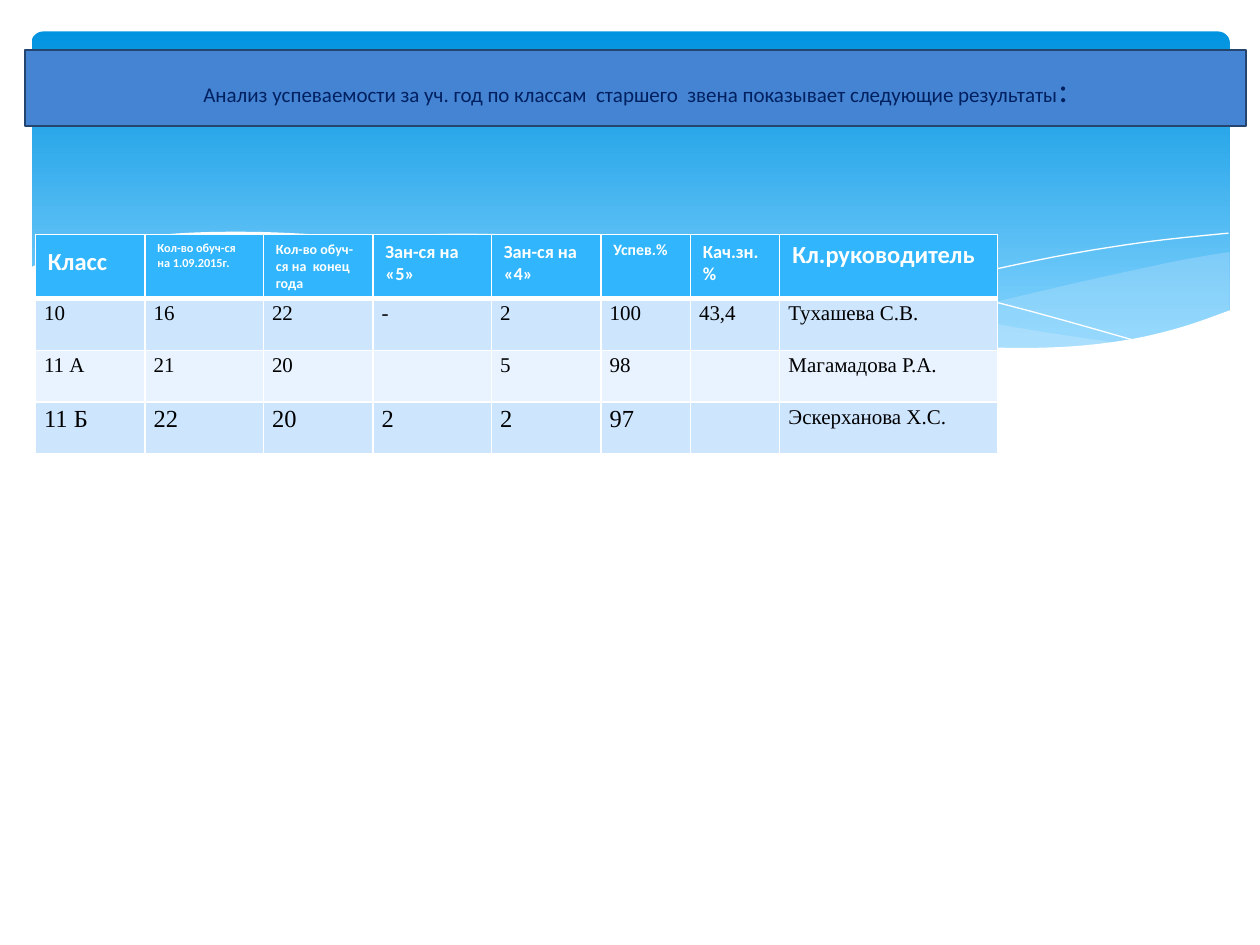
from lxml import etree
from pptx import Presentation
from pptx import util as u
from pptx.dml.color import RGBColor
from pptx.enum import shapes, text
from pptx.oxml.ns import qn

COLORS = {
    "sky_top": "0293E0", "sky_bottom": "83D3FE", "wave": "C6E7FC",
    "white": "FFFFFF", "black": "000000", "header": "31B6FD",
    "band_dark": "CEE5FE", "band_light": "E8F3FF",
    "title_fill": "4584D3", "title_line": "24456E", "title_text": "002060",
}

# Each outline is a list of smooth curves, joined by straight lines
RIGHT_WAVE = [
    [(9.76, 2), (9.35, 2.07), (8.61, 2.23), (7.79, 2.42), (7.06, 2.57), (6.61, 2.65)],
    [(6.61, 2.65), (7.19, 2.72), (7.69, 2.77), (8.14, 2.78), (8.72, 2.74),
     (9.21, 2.65), (9.49, 2.57), (9.76, 2.47)],
]
MIDDLE_WAVE = [
    [(8.93, 2.73), (8.07, 2.6), (7.06, 2.4), (6.29, 2.22), (5.55, 2.05), (4.89, 1.94),
     (4.2, 1.87), (3.61, 1.85), (3.13, 1.88), (2.86, 1.91)],
    [(2.86, 1.91), (3.42, 1.99), (4.04, 2.11), (4.91, 2.32), (5.66, 2.48), (6.34, 2.61),
     (6.95, 2.7), (7.48, 2.76), (7.96, 2.78), (8.48, 2.77), (8.93, 2.73)],
]
LONG_LINE = [[(3.09, 1.95), (3.44, 1.9), (4.01, 1.87), (4.69, 1.89), (5.33, 1.94),
              (6.08, 2.04), (6.95, 2.19), (7.95, 2.41), (9.07, 2.72)]]
RIGHT_LINE = [[(6.13, 2.57), (6.72, 2.41), (7.48, 2.23), (8.36, 2.04), (9.1, 1.92),
               (9.75, 1.85)]]
WHITE_WAVE = [
    [(9.77, 2.46), (9.4, 2.59), (8.99, 2.69), (8.5, 2.75), (7.93, 2.76), (7.26, 2.72),
     (6.48, 2.62), (5.55, 2.45), (4.47, 2.2), (3.65, 2.02), (2.92, 1.9), (2.3, 1.85),
     (1.77, 1.84), (1.32, 1.86), (0.95, 1.91), (0.59, 1.99), (0.36, 2.07), (0.23, 2.13)],
    [(0.23, 3.29), (9.77, 3.29)],
]

# Text and size of each header cell
HEADER = [("Класс", 14), ("Кол-во обуч-ся на 1.09.2015г.", 7),
          ("Кол-во обуч-ся на  конец года", 8), ("Зан-ся на «5»", 10.5),
          ("Зан-ся на «4»", 10.5), ("Успев.%", 9), ("Кач.зн. %", 10.5),
          ("Кл.руководитель", 14)]
ROWS = [
    ["10", "16", "22", "-", "2", "100", "43,4", "Тухашева С.В."],
    ["11 А", "21", "20", "", "5", "98", "", "Магамадова Р.А."],
    ["11 Б", "22", "20", "2", "2", "97", "", "Эскерханова Х.С."],
]
COL_WIDTHS = [0.87, 0.94, 0.87, 0.94, 0.87, 0.71, 0.71, 1.73]
ROW_HEIGHTS = [0.5, 0.41, 0.41, 0.41]


def inch(value):
    return u.Cm(value * 2.54)


def color(name):
    return RGBColor.from_string(COLORS[name])


def style_run(r, size, name, font="Calibri", bold=False):
    r.font.size, r.font.name, r.font.bold = u.Pt(size), font, bold
    r.font.color.rgb = color(name)


def smooth(points, steps=5):
    """Catmull-Rom curve through the points."""
    padded = [points[0], *points, points[-1]]
    curve = [points[0]]
    for a, b, c, d in zip(padded, padded[1:], padded[2:], padded[3:]):
        for t in (i / steps for i in range(1, steps + 1)):
            curve.append(tuple(
                0.5 * (2 * q + (s - p) * t + (2 * p - 5 * q + 4 * s - v) * t ** 2
                       + (3 * q - p - 3 * s + v) * t ** 3)
                for p, q, s, v in zip(a, b, c, d)))
    return curve


def add_outline(slide, x, y, curves, closed):
    points = [(inch(x + px), inch(y + py)) for c in curves for px, py in smooth(c)]
    builder = slide.shapes.build_freeform(*points[0])
    builder.add_line_segments(points[1:], close=closed)
    sp = builder.convert_to_shape()
    sp.shadow.inherit = False
    return sp


def add_wave(slide, x, y, curves, name, opacity=100):
    sp = add_outline(slide, x, y, curves, True)
    sp.fill.solid()
    sp.fill.fore_color.rgb = color(name)
    sp.line.fill.background()
    if opacity < 100:
        clr = sp.fill._xPr.find(qn("a:solidFill"))[0]
        etree.SubElement(clr, qn("a:alpha"), val=str(opacity * 1000))


def add_hairline(slide, x, y, curves):
    sp = add_outline(slide, x, y, curves, False)
    sp.fill.background()
    sp.line.color.rgb = color("white")
    sp.line.width = u.Pt(0)


def add_backdrop(slide, x, y):
    # Gradient panel
    sp = slide.shapes.add_shape(shapes.MSO_SHAPE.ROUNDED_RECTANGLE,
                                inch(x + 0.25), inch(y + 0.25), inch(9.51), inch(2.7))
    sp.adjustments[0] = 0.034
    sp.shadow.inherit = False
    sp.line.fill.background()
    sp.fill.gradient()
    sp.fill.gradient_angle = 270
    stops = zip(sp.fill.gradient_stops, ((0, "sky_top"), (0.9, "sky_bottom")))
    for stop, (position, name) in stops:
        stop.position = position
        stop.color.rgb = color(name)
    # Waves
    add_wave(slide, x, y, RIGHT_WAVE, "wave", 29)
    add_wave(slide, x, y, MIDDLE_WAVE, "wave", 40)
    add_hairline(slide, x, y, LONG_LINE)
    add_hairline(slide, x, y, RIGHT_LINE)
    add_wave(slide, x, y, WHITE_WAVE, "white")


def style_cell(cell, fill, bottom=1):
    tcPr = cell._tc.get_or_add_tcPr()
    for tag, width in (("lnL", 1), ("lnR", 1), ("lnT", 1), ("lnB", bottom)):
        ln = etree.SubElement(tcPr, qn("a:" + tag), w=str(u.Pt(width)))
        solid = etree.SubElement(ln, qn("a:solidFill"))
        etree.SubElement(solid, qn("a:srgbClr"), val=COLORS["white"])
    cell.fill.solid()
    cell.fill.fore_color.rgb = color(fill)


def add_results_table(slide, x, y, w, h):
    table = slide.shapes.add_table(len(ROWS) + 1, len(HEADER), inch(x), inch(y),
                                   inch(w), inch(h)).table
    for col, width in zip(table.columns, COL_WIDTHS):
        col.width = inch(width)
    for row, height in zip(table.rows, ROW_HEIGHTS):
        row.height = inch(height)
    # Header row
    for j, (label, size) in enumerate(HEADER):
        cell = table.cell(0, j)
        style_cell(cell, "header", 3)
        p = cell.text_frame.paragraphs[0]
        p.text = label
        style_run(p.runs[0], size, "white", bold=True)
    r = table.cell(0, 0).text_frame.paragraphs[0].add_run()
    r.text = " "
    style_run(r, 18, "white", bold=True)
    # Class rows: the last one is larger, except for the teacher
    for i, values in enumerate(ROWS, 1):
        for j, value in enumerate(values):
            cell = table.cell(i, j)
            style_cell(cell, "band_dark" if i % 2 else "band_light")
            cell.margin_left = cell.margin_right = inch(0.07)
            cell.margin_top = cell.margin_bottom = 0
            if value:
                p = cell.text_frame.paragraphs[0]
                p.text = value
                p.line_spacing = 1.15
                large = i == len(ROWS) and j < len(HEADER) - 1
                style_run(p.runs[0], 14 if large else 12, "black", "Times New Roman")


def add_title(slide, x, y, w, h):
    sp = slide.shapes.add_shape(shapes.MSO_SHAPE.RECTANGLE,
                                inch(x), inch(y), inch(w), inch(h))
    sp.shadow.inherit = False
    sp.fill.solid()
    sp.fill.fore_color.rgb = color("title_fill")
    sp.line.color.rgb = color("title_line")
    sp.line.width = u.Pt(1.25)
    tf = sp.text_frame
    tf.word_wrap = True
    tf.vertical_anchor = text.MSO_ANCHOR.MIDDLE
    p = tf.paragraphs[0]
    p.alignment = text.PP_ALIGN.CENTER
    title = ("Анализ успеваемости за уч. год по классам  старшего  звена "
             "показывает следующие результаты")
    for part, size in ((title, 12), (":", 20)):
        r = p.add_run()
        r.text = part
        style_run(r, size, "title_text")


def main():
    prs = Presentation()
    prs.slide_width, prs.slide_height = inch(10), inch(7.5)
    slide = prs.slides.add_slide(prs.slide_layouts[6])
    add_backdrop(slide, 0, 0)
    add_results_table(slide, 0.28, 1.86, sum(COL_WIDTHS), sum(ROW_HEIGHTS))
    add_title(slide, 0.2, 0.4, 9.69, 0.6)
    prs.save("out.pptx")


if __name__ == "__main__":
    main()
